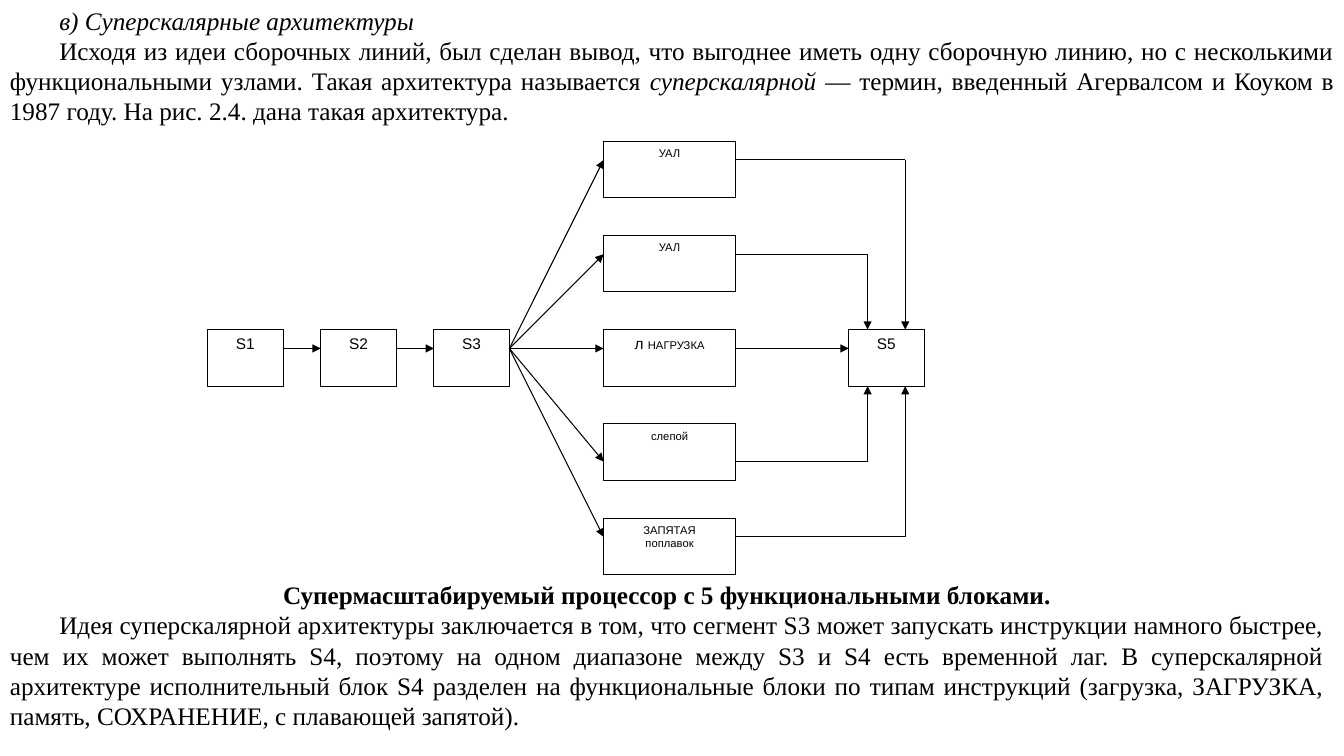
from dataclasses import dataclass
from typing import Any

from lxml.etree import SubElement
from pptx import Presentation
from pptx.dml.color import RGBColor
from pptx.enum.shapes import MSO_CONNECTOR as Connector, MSO_SHAPE as Preset
from pptx.enum.text import MSO_ANCHOR as Anchor, MSO_AUTO_SIZE as AutoSize, PP_ALIGN as Align
from pptx.oxml.ns import qn
from pptx.util import Inches, Pt

BLACK, WHITE = "000000", "FFFFFF"
WIDTH, HEIGHT = 13.33, 7.5
LEFT, TOP, STEP = 2.06, 1.4, 0.187
BOX_ROWS, STAGE_COLUMNS, UNIT_COLUMNS = 3, 4, 7
UNIT_COLUMN, RESULT_COLUMN = 21, 34
STAGE_ROW, STAGE_AXIS = 10, 11


@dataclass(frozen=True)
class Run:
    text: str
    size: float = 18
    name: str = "Times New Roman"
    bold: bool = False
    italic: bool = False


@dataclass(frozen=True)
class Line:
    runs: tuple[Run, ...]
    alignment: Any = Align.JUSTIFY
    indent: float = 0.49


@dataclass(frozen=True)
class Box:
    column: int
    row: int
    columns: int
    lines: tuple[Line, ...]


@dataclass(frozen=True)
class Unit:
    row: int
    axis: int
    lines: tuple[Line, ...]
    turn: int | None = None


def color(value: str) -> RGBColor:
    return RGBColor.from_string(value)


def apply(target: Any, formats: dict[str, Any]) -> None:
    for name, value in formats.items():
        setattr(target, name, value)


def label(text: str, size: float = 8) -> Run:
    return Run(text, size, "Arial")


def centered(*runs: Run) -> Line:
    return Line(runs, Align.CENTER, 0)


def write(frame: Any, lines: tuple[Line, ...]) -> None:
    for index, line in enumerate(lines):
        paragraph = frame.add_paragraph() if index else frame.paragraphs[0]
        paragraph.alignment = line.alignment
        if line.indent:
            properties = paragraph._p.get_or_add_pPr()
            properties.set("marL", "0")
            properties.set("indent", str(Inches(line.indent)))
        for item in line.runs:
            run = paragraph.add_run()
            run.text = item.text
            apply(run.font, {"size": Pt(item.size), "name": item.name,
                             "bold": item.bold, "italic": item.italic})
            run.font.color.rgb = color(BLACK)


def add_text(slide: Any, top: float, width: float, height: float, lines: tuple[Line, ...]) -> None:
    frame = slide.shapes.add_textbox(0, Inches(top), Inches(width), Inches(height)).text_frame
    apply(frame, {"word_wrap": True, "auto_size": AutoSize.SHAPE_TO_FIT_TEXT})
    write(frame, lines)


def grid_point(column: int, row: int) -> tuple[int, int]:
    return Inches(LEFT + column * STEP), Inches(TOP + row * STEP)


def add_box(shapes: Any, box: Box) -> None:
    shape = shapes.add_shape(Preset.RECTANGLE, *grid_point(box.column, box.row),
                             Inches(box.columns * STEP), Inches(BOX_ROWS * STEP))
    shape.shadow.inherit = False
    shape.fill.solid()
    shape.fill.fore_color.rgb = color(WHITE)
    shape.line.color.rgb = color(BLACK)
    shape.line.width = Pt(0.75)
    apply(shape.text_frame, {"word_wrap": True, "vertical_anchor": Anchor.TOP})
    write(shape.text_frame, box.lines)


def add_line(shapes: Any, start: tuple[int, int], end: tuple[int, int], arrow: bool = True) -> None:
    connector = shapes.add_connector(Connector.STRAIGHT, *grid_point(*start), *grid_point(*end))
    connector.line.color.rgb = color(BLACK)
    connector.line.width = Pt(0.75)
    if arrow:
        SubElement(connector.line._get_or_add_ln(), qn("a:tailEnd"), type="triangle")
    SubElement(connector._element.spPr, qn("a:effectLst"))


STAGES = {"S1": 0, "S2": 6, "S3": 12, "S5": RESULT_COLUMN}
UNITS = (
    Unit(0, 1, (centered(label("УАЛ")),), 37),
    Unit(5, 6, (centered(label("УАЛ")),), 35),
    Unit(10, 11, (centered(label("л ", 11), label("НАГРУЗКА")),)),
    Unit(15, 17, (centered(label("слепой")),), 35),
    Unit(20, 21, (centered(label("ЗАПЯТАЯ")), centered(label("поплавок"))), 37),
)
INTRODUCTION = (
    Line((Run("в) Суперскалярные архитектуры", italic=True),)),
    Line((
        Run("Исходя из идеи сборочных линий, был сделан вывод, что выгоднее иметь одну сборочную "
            "линию, но с несколькими функциональными узлами. Такая архитектура называется "),
        Run("суперскалярной ", italic=True),
        Run("— термин, введенный Агервалсом и Коуком в 1987 году. "
            "На рис. 2.4. дана такая архитектура."),
    )),
)
EXPLANATION = (
    centered(Run("Супермасштабируемый процессор с 5 функциональными блоками.", bold=True)),
    Line((Run(
        "Идея суперскалярной архитектуры заключается в том, что сегмент S3 может запускать "
        "инструкции намного быстрее, чем их может выполнять S4, поэтому на одном диапазоне между "
        "S3 и S4 есть временной лаг. В суперскалярной архитектуре исполнительный блок S4 разделен "
        "на функциональные блоки по типам инструкций (загрузка, ЗАГРУЗКА, память, СОХРАНЕНИЕ, "
        "с плавающей запятой)."),)),
)


def add_diagram(slide: Any) -> None:
    shapes = slide.shapes.add_group_shape().shapes
    for name, column in STAGES.items():
        add_box(shapes, Box(column, STAGE_ROW, STAGE_COLUMNS, (centered(label(name, 11)),)))
    for start, end in ((STAGES["S1"], STAGES["S2"]), (STAGES["S2"], STAGES["S3"])):
        add_line(shapes, (start + STAGE_COLUMNS, STAGE_AXIS), (end, STAGE_AXIS))
    fork = (STAGES["S3"] + STAGE_COLUMNS, STAGE_AXIS)
    for unit in UNITS:
        add_box(shapes, Box(UNIT_COLUMN, unit.row, UNIT_COLUMNS, unit.lines))
        add_line(shapes, fork, (UNIT_COLUMN, unit.axis))
        output = (UNIT_COLUMN + UNIT_COLUMNS, unit.axis)
        if unit.turn is None:
            add_line(shapes, output, (RESULT_COLUMN, unit.axis))
        else:
            corner = (unit.turn, unit.axis)
            edge = STAGE_ROW if unit.axis < STAGE_AXIS else STAGE_ROW + BOX_ROWS
            add_line(shapes, output, corner, arrow=False)
            add_line(shapes, corner, (unit.turn, edge))


def main() -> None:
    presentation = Presentation()
    apply(presentation, {"slide_width": Inches(WIDTH), "slide_height": Inches(HEIGHT)})
    slide = presentation.slides.add_slide(presentation.slide_layouts[6])
    add_text(slide, 0, WIDTH, 1.31, INTRODUCTION)
    add_diagram(slide)
    add_text(slide, 5.7, WIDTH - 0.1, 1.62, EXPLANATION)
    presentation.save("out.pptx")


if __name__ == "__main__":
    main()
